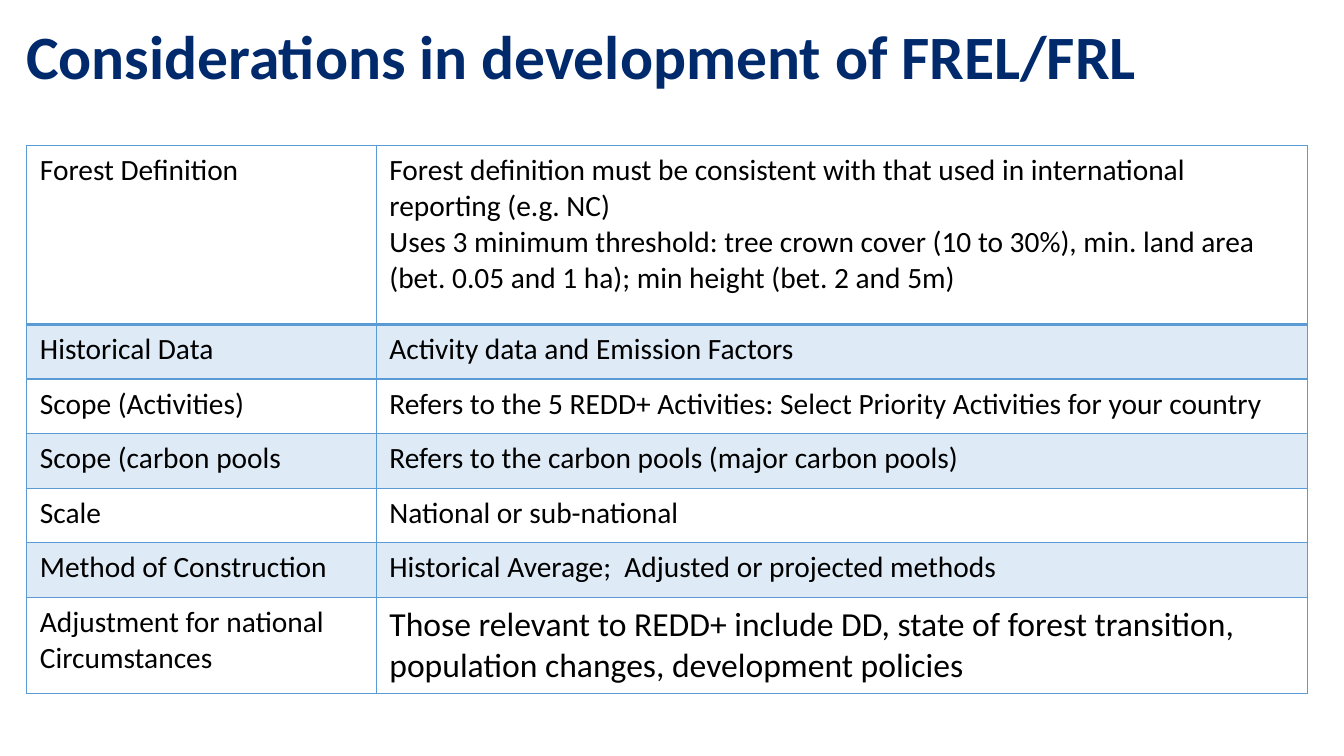
from dataclasses import dataclass

from lxml import etree
from pptx import Presentation
from pptx.dml.color import RGBColor
from pptx.enum.text import MSO_ANCHOR, PP_ALIGN
from pptx.oxml.ns import qn
from pptx.util import Inches, Pt

LEFT = PP_ALIGN.LEFT
TOP, MIDDLE = MSO_ANCHOR.TOP, MSO_ANCHOR.MIDDLE
TITLE_ONLY = 5


@dataclass(frozen=True)
class Theme:
    """Colours, type sizes and line widths of the slide."""
    font: str = "Calibri"
    navy: str = "002A6C"
    black: str = "000000"
    blue: str = "5B9BD5"
    band_alpha: int = 20
    title_size: int = 44
    cell_size: int = 21
    large_size: int = 24
    rule: int = 1
    heavy_rule: int = 2


THEME = Theme()
SLIDE_WIDTH, SLIDE_HEIGHT = Inches(13.33), Inches(7.5)
MARGIN = 0.02
COLUMN_SHARES = (0.26, 0.693)
TABLE_TOP = 0.192
SINGLE_ROW = 0.0723
ROW_SHARES = (0.237, *[SINGLE_ROW] * 5, 0.124)

CONSIDERATIONS = (
    ("Forest Definition",
     "Forest definition must be consistent with that used in international "
     "reporting (e.g. NC)\n"
     "Uses 3 minimum threshold: tree crown cover (10 to 30%), min. land area "
     "(bet. 0.05 and 1 ha); min height (bet. 2 and 5m)"),
    ("Historical Data", "Activity data and Emission Factors"),
    ("Scope (Activities)",
     "Refers to the 5 REDD+ Activities: Select Priority Activities for your country"),
    ("Scope (carbon pools", "Refers to the carbon pools (major carbon pools)"),
    ("Scale", "National or sub-national"),
    ("Method of Construction", "Historical Average;  Adjusted or projected methods"),
    ("Adjustment for national Circumstances",
     "Those relevant to REDD+ include DD, state of forest transition, "
     "population changes, development policies"),
)


def write_text(frame, text, size=THEME.cell_size, color=THEME.black,
               bold=False, spacing=1.0):
    """Write formatted text, one paragraph per line."""
    frame.word_wrap = True
    frame.text = text
    for paragraph in frame.paragraphs:
        paragraph.alignment = LEFT
        paragraph.line_spacing = spacing
        for run in paragraph.runs:
            run.font.name = THEME.font
            run.font.size = Pt(size)
            run.font.bold = bold
            run.font.color.rgb = RGBColor.from_string(color)


def add_color(parent, alpha=None):
    """Append the table blue as a solid fill, optionally transparent."""
    solid = etree.SubElement(parent, qn("a:solidFill"))
    blue = etree.SubElement(solid, qn("a:srgbClr"), val=THEME.blue)
    if alpha is not None:
        etree.SubElement(blue, qn("a:alpha"), val=str(alpha * 1000))


def style_cell(cell, row):
    """Set the borders, band fill and insets of a cell."""
    properties = cell._tc.get_or_add_tcPr()
    widths = {
        "L": THEME.rule,
        "R": THEME.rule,
        "T": THEME.heavy_rule if row == 1 else THEME.rule,
        "B": THEME.heavy_rule if row == 0 else THEME.rule,
    }
    for side, width in widths.items():
        border = etree.SubElement(properties, qn(f"a:ln{side}"), w=str(Pt(width)))
        add_color(border)
    if row % 2:
        add_color(properties, THEME.band_alpha)
    else:
        cell.fill.background()
    cell.margin_left = cell.margin_right = Inches(0.13)
    cell.margin_top = cell.margin_bottom = Inches(0.07)
    cell.vertical_anchor = TOP


def add_title(slide, text):
    """Place and fill the title placeholder."""
    title = slide.shapes.title
    title.left, title.top = Inches(0.16), 0
    title.width, title.height = Inches(12.99), Inches(1.18)
    title.text_frame.vertical_anchor = MIDDLE
    write_text(title.text_frame, text, size=THEME.title_size, color=THEME.navy,
               bold=True, spacing=0.9)


def add_considerations(slide, entries):
    """Add the two-column table of topics and explanations."""
    table = slide.shapes.add_table(
        len(entries), len(COLUMN_SHARES),
        int(SLIDE_WIDTH * MARGIN), int(SLIDE_HEIGHT * TABLE_TOP),
        int(SLIDE_WIDTH * sum(COLUMN_SHARES)),
        int(SLIDE_HEIGHT * sum(ROW_SHARES))).table
    table.first_row = table.horz_banding = False
    for column, share in zip(table.columns, COLUMN_SHARES):
        column.width = int(SLIDE_WIDTH * share)
    for row, (entry, share) in enumerate(zip(entries, ROW_SHARES)):
        table.rows[row].height = int(SLIDE_HEIGHT * share)
        for column, text in enumerate(entry):
            cell = table.cell(row, column)
            style_cell(cell, row)
            closing = row == len(entries) - 1 and column == 1
            write_text(cell.text_frame, text,
                       size=THEME.large_size if closing else THEME.cell_size)


def main():
    """Build and save the slide."""
    deck = Presentation()
    deck.slide_width, deck.slide_height = SLIDE_WIDTH, SLIDE_HEIGHT
    slide = deck.slides.add_slide(deck.slide_layouts[TITLE_ONLY])
    add_considerations(slide, CONSIDERATIONS)
    add_title(slide, "Considerations in development of FREL/FRL")
    deck.save("out.pptx")


if __name__ == "__main__":
    main()
